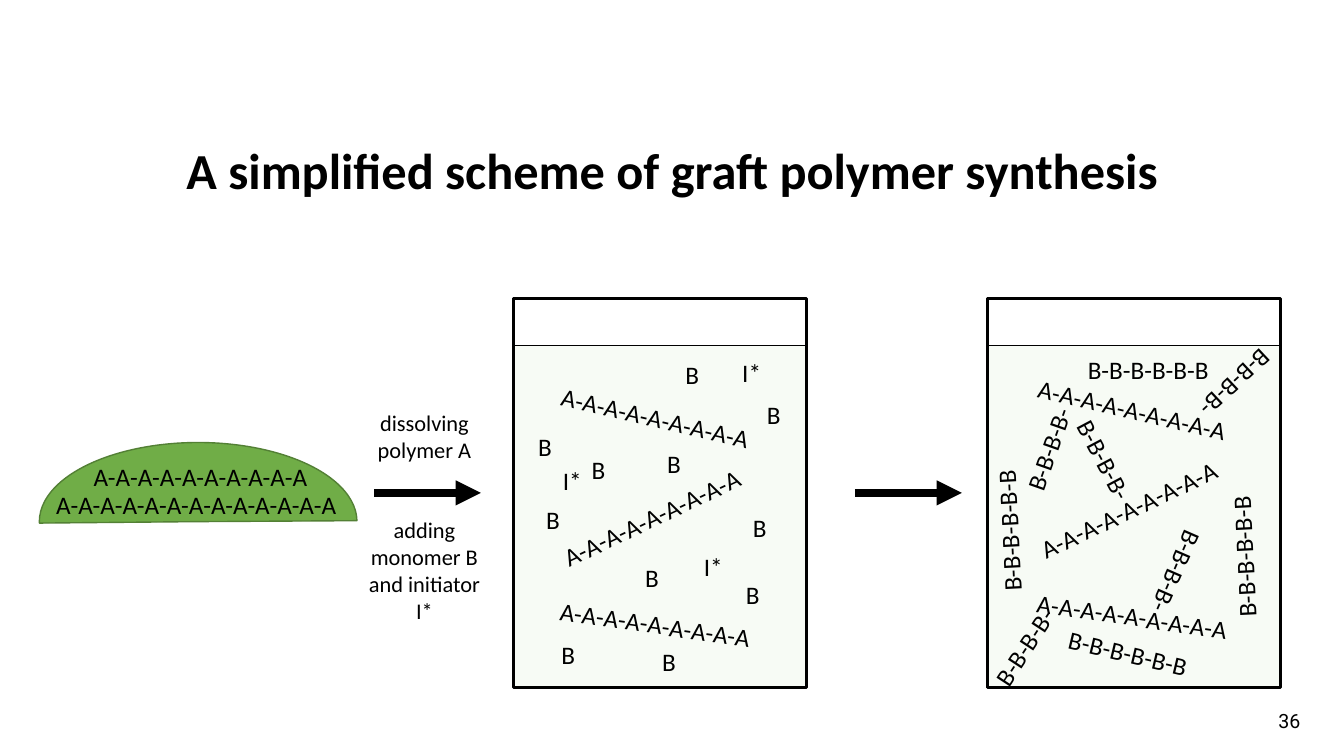
import pptx
import pptx.dml.color
import pptx.enum.shapes
import pptx.enum.text
import pptx.oxml.ns
import pptx.oxml.xmlchemy
import pptx.util

EMU_PER_PX = 9144
BLACK = "000000"
LINE_HEIGHT = 40
CENTER = pptx.enum.text.PP_ALIGN.CENTER
LEFT = pptx.enum.text.PP_ALIGN.LEFT
MIDDLE = pptx.enum.text.MSO_ANCHOR.MIDDLE
TOP = pptx.enum.text.MSO_ANCHOR.TOP
FIT_SHAPE = pptx.enum.text.MSO_AUTO_SIZE.SHAPE_TO_FIT_TEXT
SHAPES = pptx.enum.shapes.MSO_SHAPE

LONG_A = "A-A-A-A-A-A-A-A-A"
SHORT_B = "B-B-B-B-"
LONG_B = "B-B-B-B-B-B"

A_CHAINS = [(545, 396, 13.2), (541, 491, 334.6), (545, 600, 8.2)]
PRODUCT_SHIFT = (473, -8)
MONOMERS = [
    (518, 423), (571, 446), (526, 495), (664, 352), (745, 391), (731, 503),
    (646, 440), (624, 553), (541, 629), (641, 636), (724, 570),
]
INITIATORS = [(545, 457), (723, 350), (685, 542)]
GRAFTS = [
    (987, 425, 289.4), (1172, 361, 136.9), (1043, 437, 62),
    (963, 621, 303.1), (1114, 548, 113.6),
]
B_CHAINS = [
    (930, 506, 267.1), (1163, 532, 267.1), (1049, 628, 13.4), (1069, 347, 0),
]


def px(*lengths):
    return [pptx.util.Emu(length * EMU_PER_PX) for length in lengths]


def color(hex_code):
    return pptx.dml.color.RGBColor.from_string(hex_code)


def add_run(paragraph, text, size, font="Calibri", bold=False):
    run = paragraph.add_run()
    run.text = text
    run.font.size = pptx.util.Pt(size)
    run.font.name = font
    run.font.bold = bold
    run.font.color.rgb = color(BLACK)


def add_title(slide, text):
    title = slide.shapes.title
    title.left, title.top, title.width, title.height = px(92, 99, 1150, 145)
    frame = title.text_frame
    frame.vertical_anchor = MIDDLE
    frame.auto_size = pptx.enum.text.MSO_AUTO_SIZE.NONE
    paragraph = frame.paragraphs[0]
    paragraph.alignment = CENTER
    paragraph.line_spacing = 0.9
    add_run(paragraph, text, 36, bold=True)


def add_label(slide, text, left, top, width, height=LINE_HEIGHT, size=18,
              font="Calibri", anchor=TOP):
    box = slide.shapes.add_textbox(*px(left, top, width, height))
    frame = box.text_frame
    frame.word_wrap = True
    frame.auto_size = FIT_SHAPE
    frame.vertical_anchor = anchor
    paragraph = frame.paragraphs[0]
    paragraph.alignment = CENTER
    add_run(paragraph, text, size, font)


def add_chain(slide, text, left, top, width, rotation=0):
    box = slide.shapes.add_textbox(*px(left, top, width, LINE_HEIGHT))
    box.rotation = rotation
    frame = box.text_frame
    frame.word_wrap = False
    frame.auto_size = FIT_SHAPE
    paragraph = frame.paragraphs[0]
    paragraph.alignment = LEFT
    add_run(paragraph, text, 18)


def add_outlined(shapes, kind, bounds, fill, line, line_width):
    shape = shapes.add_shape(kind, *px(*bounds))
    shape.shadow.inherit = False
    if fill:
        shape.fill.solid()
        shape.fill.fore_color.rgb = color(fill)
    else:
        shape.fill.background()
    shape.line.color.rgb = color(line)
    shape.line.width = pptx.util.Pt(line_width)
    return shape


def add_element(parent, tag, **attributes):
    element = pptx.oxml.xmlchemy.OxmlElement(tag)
    for name, value in attributes.items():
        element.set(name, value)
    parent.append(element)


def set_opacity(shape, percent):
    fill = shape._element.spPr.find(pptx.oxml.ns.qn("a:solidFill"))
    add_element(fill[0], "a:alpha", val=str(percent * 1000))


def add_beaker(slide, left):
    group = slide.shapes.add_group_shape()
    liquid = add_outlined(group.shapes, SHAPES.RECTANGLE,
                          (left, 343, 291, 339), "E2F0D9", BLACK, 1)
    set_opacity(liquid, 25)
    add_outlined(group.shapes, SHAPES.RECTANGLE,
                 (left, 296, 291, 386), None, BLACK, 2.25)


def add_polymer_heap(slide):
    heap = add_outlined(slide.shapes, SHAPES.PIE, (118, 360, 157, 315),
                        "70AD47", "538035", 1)
    heap.rotation = 90
    heap.adjustments[0] = 53.68
    heap.adjustments[1] = 161.8
    add_chain(slide, "A-A-A-A-A-A-A-A-A-A", 83, 453, 235)
    add_chain(slide, "A-A-A-A-A-A-A-A-A-A-A-A-A", 46, 481, 310)


def add_arrow(slide, left, right, y):
    arrow = slide.shapes.add_connector(
        pptx.enum.shapes.MSO_CONNECTOR.STRAIGHT, *px(left, y, right, y))
    arrow.line.color.rgb = color(BLACK)
    arrow.line.width = pptx.util.Pt(6)
    properties = arrow._element.spPr
    add_element(properties.find(pptx.oxml.ns.qn("a:ln")), "a:tailEnd",
                type="triangle")
    add_element(properties, "a:effectLst")


def add_solution(slide):
    add_beaker(slide, 509)
    for left, top, rotation in A_CHAINS:
        add_chain(slide, LONG_A, left, top, 221, rotation)
    for text, places in (("B", MONOMERS), ("I*", INITIATORS)):
        for left, top in places:
            add_label(slide, text, left, top, 45)


def add_product(slide):
    add_beaker(slide, 979)
    shift_x, shift_y = PRODUCT_SHIFT
    for left, top, rotation in A_CHAINS:
        add_chain(slide, LONG_A, left + shift_x, top + shift_y, 221, rotation)
    for text, width, places in ((SHORT_B, 106, GRAFTS), (LONG_B, 141, B_CHAINS)):
        for left, top, rotation in places:
            add_chain(slide, text, left, top, width, rotation)


def main():
    presentation = pptx.Presentation()
    presentation.slide_width, presentation.slide_height = px(1333, 750)
    slide = presentation.slides.add_slide(presentation.slide_layouts[5])
    add_title(slide, "A simplified scheme of graft polymer synthesis")
    add_polymer_heap(slide)
    add_arrow(slide, 371, 477, 489)
    add_label(slide, "dissolving polymer A", 356, 401, 130, 64, 16)
    add_label(slide, "adding monomer B and initiator I*", 356, 507, 130, 118, 16)
    add_solution(slide)
    add_arrow(slide, 848, 954, 489)
    add_product(slide)
    add_label(slide, "36", 1251, 695, 56, size=14, font="Roboto", anchor=MIDDLE)
    presentation.save("out.pptx")


if __name__ == "__main__":
    main()
